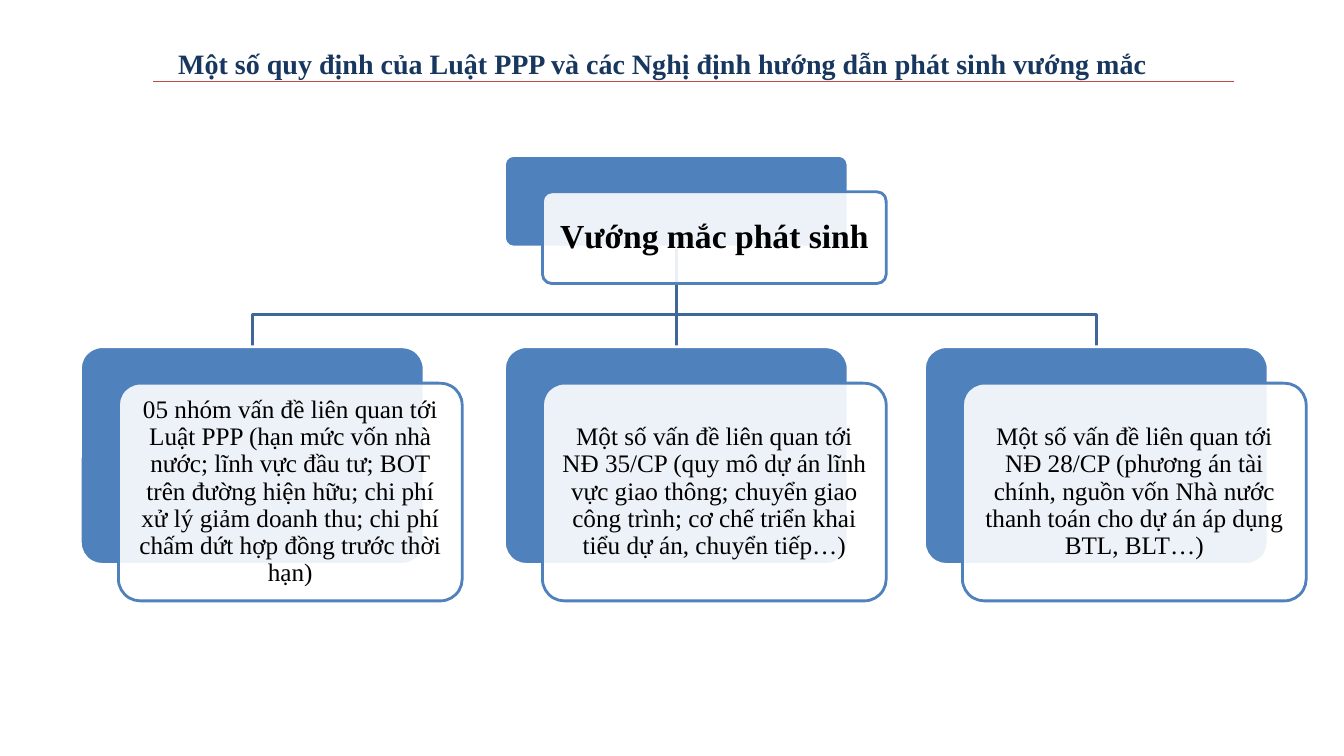
from lxml import etree
from pptx import Presentation
from pptx.dml.color import RGBColor
from pptx.enum.shapes import MSO_CONNECTOR, MSO_SHAPE
from pptx.enum.text import MSO_ANCHOR, PP_ALIGN
from pptx.oxml.ns import qn
from pptx.util import Pt

ROUNDED = MSO_SHAPE.ROUNDED_RECTANGLE
STRAIGHT = MSO_CONNECTOR.STRAIGHT
MIDDLE = MSO_ANCHOR.MIDDLE
CENTER = PP_ALIGN.CENTER
LEFT = PP_ALIGN.LEFT

FONT = "Times New Roman"
BLUE, DARK_BLUE, NAVY = "4F81BD", "3F6797", "17375E"
WHITE, BLACK, RED = "FFFFFF", "000000", "BF4C48"

CARD_W, ROOT_H, CARD_H = 245.5, 65.5, 155.5
SHIFT_X, SHIFT_Y = 27.2, 26
ROOT_X, ROOT_Y, CARD_Y = 360.3, 111, 247.7
BEND_UP = 23.1

TITLE = "Một số quy định của Luật PPP và các Nghị định hướng dẫn phát sinh vướng mắc"
ROOT_TEXT = "Vướng mắc phát sinh"
CARDS = [
    (57.4, "05 nhóm vấn đề liên quan tới Luật PPP (hạn mức vốn nhà nước; lĩnh vực "
           "đầu tư; BOT trên đường hiện hữu; chi phí xử lý giảm doanh thu; chi phí "
           "chấm dứt hợp đồng trước thời hạn)"),
    (ROOT_X, "Một số vấn đề liên quan tới NĐ 35/CP (quy mô dự án lĩnh vực giao thông; "
             "chuyển giao công trình; cơ chế triển khai tiểu dự án, chuyển tiếp…)"),
    (660.3, "Một số vấn đề liên quan tới NĐ 28/CP (phương án tài chính, nguồn vốn Nhà "
            "nước thanh toán cho dự án áp dụng BTL, BLT…)"),
]


def rgb(value):
    return RGBColor.from_string(value)


def set_line(sp, color, width):
    sp.line.color.rgb = rgb(color)
    sp.line.width = Pt(width)


def add_line(slide, x1, y1, x2, y2, color, width):
    sp = slide.shapes.add_connector(STRAIGHT, Pt(x1), Pt(y1), Pt(x2), Pt(y2))
    set_line(sp, color, width)
    etree.SubElement(sp._element.spPr, qn("a:effectLst"))


def write(sp, text, size, color, bold=False, align=CENTER):
    tf = sp.text_frame
    tf.word_wrap = True
    tf.vertical_anchor = MIDDLE
    p = tf.paragraphs[0]
    p.text = text
    p.alignment = align
    p.font.name = FONT
    p.font.size = Pt(size)
    p.font.bold = bold
    p.font.color.rgb = rgb(color)
    return tf


def add_title(slide, x, y, w, h):
    add_line(slide, x - 10.8, y + 36.7, x + w - 0.7, y + 36.7, RED, 0.75)
    sp = slide.shapes.add_textbox(Pt(x), Pt(y), Pt(w), Pt(h))
    write(sp, TITLE, 20, NAVY, bold=True, align=LEFT)


def add_panel(slide, x, y, w, h, fill, line):
    sp = slide.shapes.add_shape(ROUNDED, Pt(x), Pt(y), Pt(w), Pt(h))
    sp.adjustments[0] = 0.1
    sp.shadow.inherit = False
    sp.fill.solid()
    sp.fill.fore_color.rgb = rgb(fill)
    set_line(sp, line, 2)
    return sp


def add_card(slide, x, y, w, h, text, size, inset, bold=False):
    add_panel(slide, x, y, w, h, BLUE, WHITE)
    sp = add_panel(slide, x + SHIFT_X, y + SHIFT_Y, w, h, WHITE, BLUE)
    # 90% opaque front panel
    color = sp._element.spPr.find(qn("a:solidFill"))[0]
    etree.SubElement(color, qn("a:alpha"), val="90000")
    tf = write(sp, text, size, BLACK, bold)
    tf.margin_left = tf.margin_right = tf.margin_top = tf.margin_bottom = Pt(inset)
    tf.paragraphs[0].line_spacing = 0.9


def add_branch(slide, x1, y1, x2, y2):
    if x1 == x2:
        add_line(slide, x1, y1, x2, y2, DARK_BLUE, 2)
        return
    bend = y2 - BEND_UP
    builder = slide.shapes.build_freeform(Pt(x1), Pt(y1))
    corners = [(x1, bend), (x2, bend), (x2, y2)]
    builder.add_line_segments([(Pt(x), Pt(y)) for x, y in corners], close=False)
    sp = builder.convert_to_shape()
    sp.shadow.inherit = False
    sp.fill.background()
    set_line(sp, DARK_BLUE, 2)


def add_hierarchy(slide, x, y):
    # Branches lie behind the cards
    middle = x + CARD_W / 2
    for card_x, _ in reversed(CARDS):
        add_branch(slide, middle, y + ROOT_H, card_x + CARD_W / 2, CARD_Y)
    add_card(slide, x, y, CARD_W, ROOT_H, ROOT_TEXT, 24, 7.2, bold=True)
    for card_x, text in CARDS:
        add_card(slide, card_x, CARD_Y, CARD_W, CARD_H, text, 18, 5)


def main():
    prs = Presentation()
    prs.slide_width, prs.slide_height = Pt(960), Pt(540)
    slide = prs.slides.add_slide(prs.slide_layouts[6])
    add_title(slide, 120.2, 21.6, 761.8, 46.8)
    add_hierarchy(slide, ROOT_X, ROOT_Y)
    prs.save("out.pptx")


if __name__ == "__main__":
    main()
